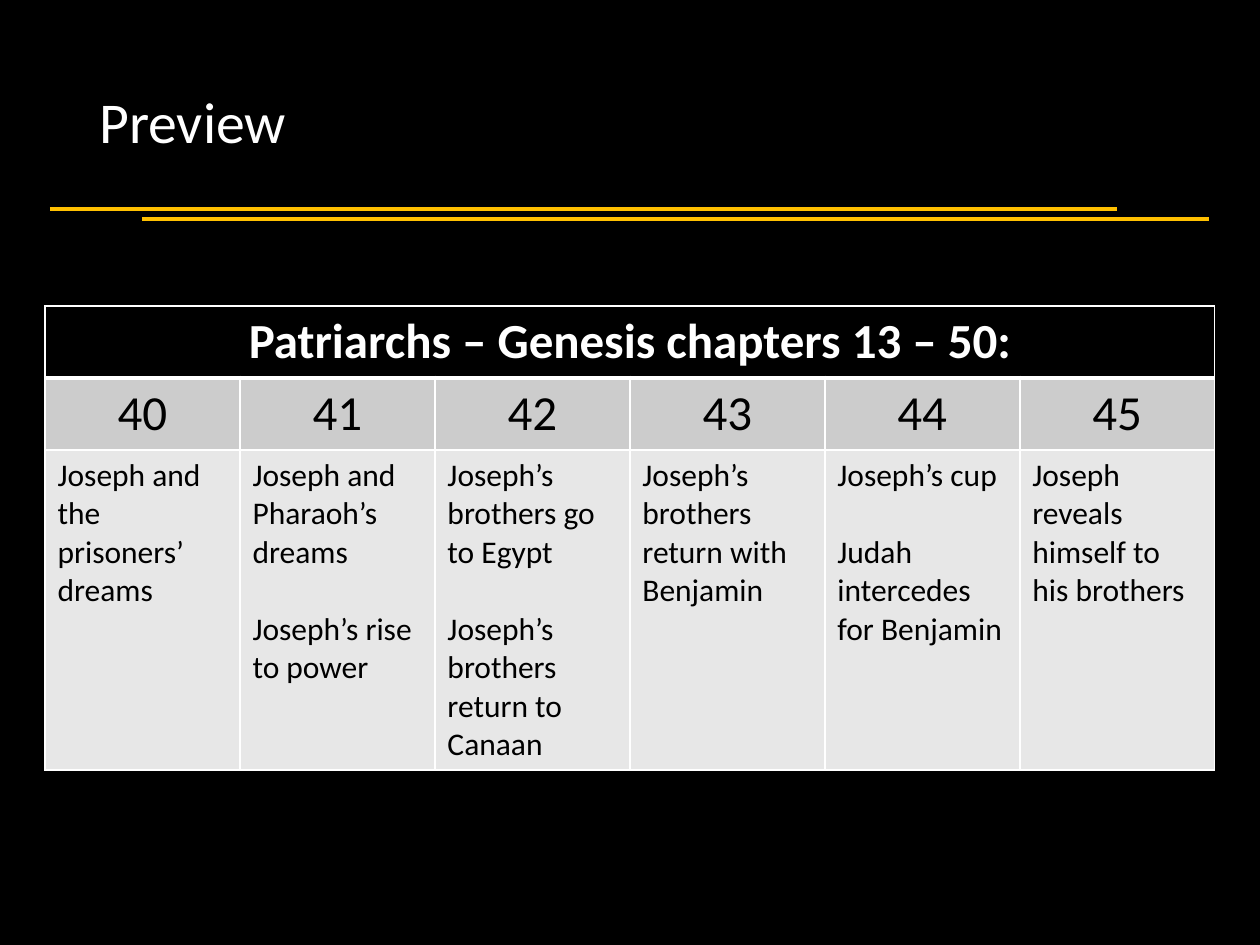
from lxml import etree
from pptx import Presentation
from pptx.dml.color import RGBColor
from pptx.enum import shapes, text
from pptx.oxml.ns import qn
from pptx.util import Pt

SCALE = 914400 / 126
BLACK = RGBColor(0, 0, 0)
WHITE = RGBColor(255, 255, 255)
GOLD = RGBColor(0xFF, 0xC0, 0x00)
GREY = RGBColor(0xCC, 0xCC, 0xCC)
PALE = RGBColor(0xE7, 0xE7, 0xE7)

HEAD = "Patriarchs – Genesis chapters 13 – 50:"
CHAPTERS = {
    "40": ["Joseph and the prisoners’ dreams"],
    "41": ["Joseph and Pharaoh’s dreams", "Joseph’s rise to power"],
    "42": ["Joseph’s brothers go to Egypt", "Joseph’s brothers return to Canaan"],
    "43": ["Joseph’s brothers return with Benjamin"],
    "44": ["Joseph’s cup", "Judah intercedes for Benjamin"],
    "45": ["Joseph reveals himself to his brothers"],
}


def px(n):
    return round(n * SCALE)


class Deck:
    face = "Calibri"

    def __init__(self, wide, high):
        self.prs = Presentation()
        self.prs.slide_width, self.prs.slide_height = px(wide), px(high)
        self.slide = self.prs.slides.add_slide(self.prs.slide_layouts[6])
        fill = self.slide.background.fill
        fill.solid()
        fill.fore_color.rgb = BLACK

    def label(self, frame, lines, size, color, bold=False, align=None, gap=0):
        for i, line in enumerate(lines):
            para = frame.add_paragraph() if i else frame.paragraphs[0]
            para.text = line
            para.alignment = align
            if i:
                para.space_before = Pt(gap)
            font = para.font
            font.name, font.size, font.bold = self.face, Pt(size), bold
            font.color.rgb = color

    def title(self, words, x, y, w, h):
        frame = self.slide.shapes.add_textbox(px(x), px(y), px(w), px(h)).text_frame
        frame.word_wrap = True
        frame.vertical_anchor = text.MSO_ANCHOR.MIDDLE
        self.label(frame, [words], 33, WHITE)
        frame.paragraphs[0].line_spacing = 0.9

    def rule(self, x, y, w):
        line = self.slide.shapes.add_connector(
            shapes.MSO_CONNECTOR.STRAIGHT, px(x), px(y), px(x + w), px(y))
        line.line.color.rgb = GOLD
        line.line.width = Pt(2.25)
        etree.SubElement(line._element.spPr, qn("a:effectLst"))

    def grid(self, x, y, width, heights, cols):
        frame = self.slide.shapes.add_table(
            len(heights), cols, px(x), px(y), px(width * cols), px(sum(heights)))
        table = frame.table
        table.first_row = table.horz_banding = False
        for col in table.columns:
            col.width = px(width)
        for row, high in zip(table.rows, heights):
            row.height = px(high)
        return table

    def cell(self, cell, fill, top=1, foot=1):
        cell.fill.solid()
        cell.fill.fore_color.rgb = fill
        props = cell._tc.get_or_add_tcPr()
        sides = {"lnL": 1, "lnR": 1, "lnT": top, "lnB": foot}
        for i, (side, size) in enumerate(sides.items()):
            edge = etree.Element(qn("a:" + side), w=str(int(Pt(size))))
            paint = etree.SubElement(edge, qn("a:solidFill"))
            etree.SubElement(paint, qn("a:srgbClr"), val=str(WHITE))
            props.insert(i, edge)


def main():
    deck = Deck(1260, 945)

    # Title and the two offset rules
    deck.title("Preview", 87, 50, 1086, 149)
    for x, y in ((50, 209), (142, 219)):
        deck.rule(x, y, 1067)

    # Chapter table
    table = deck.grid(45, 306, 195, (72, 72, 320), len(CHAPTERS))
    mid = text.PP_ALIGN.CENTER
    for col, (chapter, events) in enumerate(CHAPTERS.items()):
        head, number, body = (table.cell(row, col) for row in range(3))
        deck.cell(head, BLACK, foot=3)
        deck.cell(number, GREY, top=3)
        deck.cell(body, PALE)
        deck.label(number.text_frame, [chapter], 28, BLACK, align=mid)
        deck.label(body.text_frame, events, 18, BLACK, gap=22)

    # Heading across all columns
    first = table.cell(0, 0)
    first.merge(table.cell(0, len(CHAPTERS) - 1))
    deck.label(first.text_frame, [HEAD], 28, WHITE, bold=True, align=mid)

    deck.prs.save("out.pptx")


if __name__ == "__main__":
    main()
